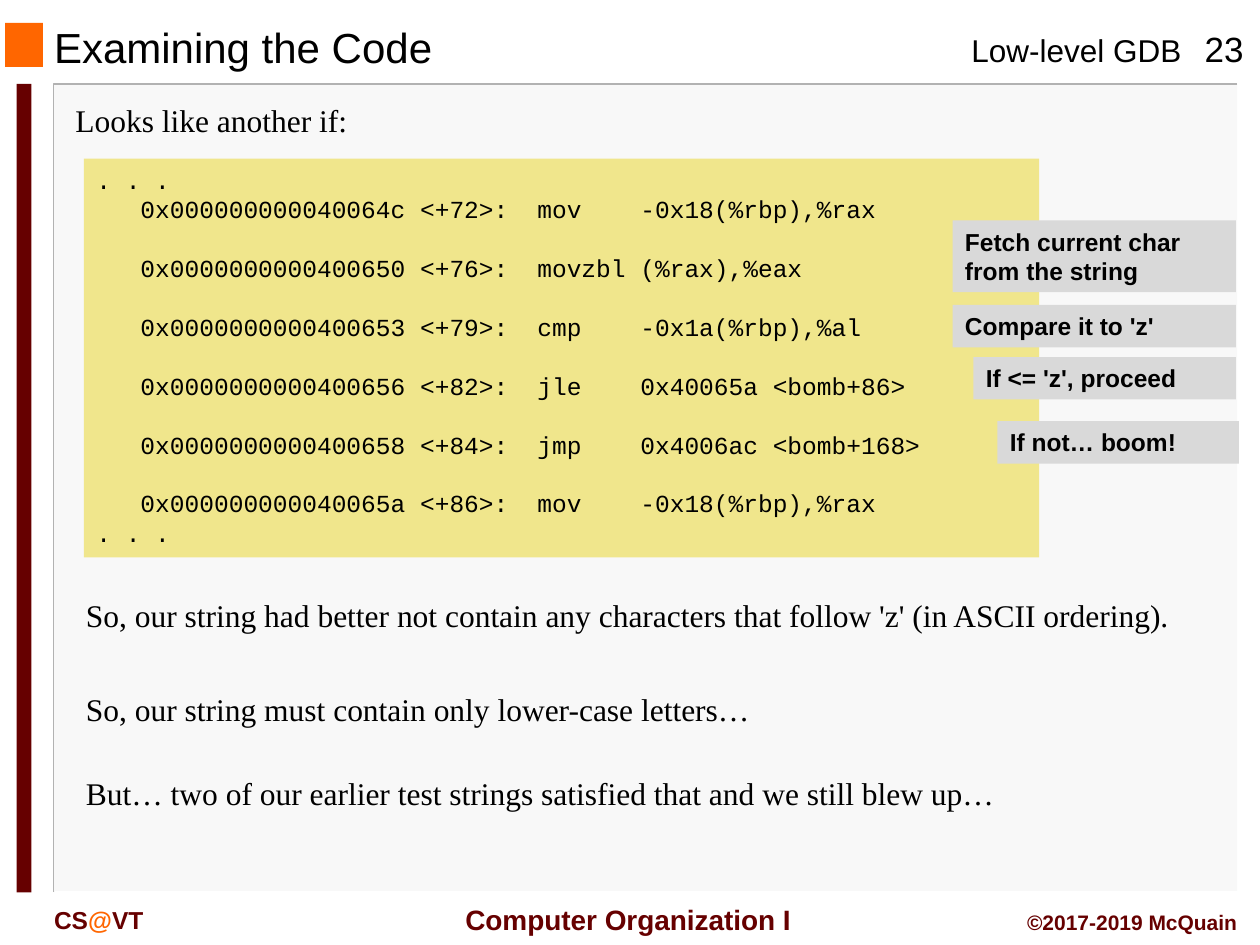
from pptx import Presentation
from pptx.dml.color import RGBColor
from pptx.enum.shapes import MSO_SHAPE
from pptx.enum.text import MSO_ANCHOR, PP_ALIGN
from pptx.util import Pt

COLORS = {
    "text": "000000", "maroon": "660000", "orange": "FF6600",
    "panel": "F8F8F8", "edge": "B2B2B2", "white": "FFFFFF",
    "code": "F0E68C", "note": "D9D9D9",
}
SANS, SERIF, MONO = "Arial", "Times New Roman", "Courier New"
CODE_SIZE = 14
CODE_LINE = 16.8


def rgb(name):
    return RGBColor.from_string(COLORS[name])


class SlideBuilder:
    """Draws on one slide; every box is (left, top, width, height) in points."""

    def __init__(self, slide):
        self.slide = slide

    def block(self, box, fill):
        shape = self.slide.shapes.add_shape(MSO_SHAPE.RECTANGLE, *map(Pt, box))
        shape.shadow.inherit = False
        shape.fill.solid()
        shape.fill.fore_color.rgb = rgb(fill)
        shape.line.fill.background()
        return shape

    def edge(self, points, color):
        start, *others = [(Pt(x), Pt(y)) for x, y in points]
        outline = self.slide.shapes.build_freeform(*start)
        outline.add_line_segments(others, close=False)
        shape = outline.convert_to_shape()
        shape.shadow.inherit = False
        shape.fill.background()
        shape.line.color.rgb = rgb(color)
        shape.line.width = Pt(1)

    def set_text(self, shape, text, size, font, color="text", bold=False,
                 align=PP_ALIGN.LEFT, anchor=MSO_ANCHOR.TOP, wrap=True):
        frame = shape.text_frame
        frame.word_wrap = wrap
        frame.vertical_anchor = anchor
        frame.text = text
        for paragraph in frame.paragraphs:
            paragraph.alignment = align
            for run in paragraph.runs:
                self.style(run, size, font, color, bold)
        return frame

    def style(self, run, size, font, color, bold):
        run.font.size = Pt(size)
        run.font.name = font
        run.font.bold = bold
        run.font.color.rgb = rgb(color)

    def label(self, box, text, size, font=SANS, **options):
        shape = self.slide.shapes.add_textbox(*map(Pt, box))
        return self.set_text(shape, text, size, font, **options)

    def note(self, box, text):
        self.set_text(self.block(box, "note"), text, 14, SANS, bold=True)

    def listing(self, box, instructions):
        """Sets the instructions between ellipses, a blank line's gap apart."""
        rows = [f"   0x{address:016x} <+{offset}>:\t{name:<7}{operands}"
                for address, offset, name, operands in instructions]
        text = "\n".join([". . .", *rows, ". . ."])
        frame = self.set_text(self.block(box, "code"), text, CODE_SIZE, MONO)
        for paragraph in frame.paragraphs[1:-2]:
            paragraph.space_after = Pt(CODE_LINE)


def draw_frame(builder):
    left, top, right, bottom = 30.5, 48, 707, 509.8
    builder.block((left, top, right - left, bottom - top), "panel")
    builder.edge([(right, top), (left, top), (left, bottom)], "edge")
    builder.edge([(right + 1, top), (right + 1, bottom), (left + 1, bottom)], "white")
    builder.block((3, 13, 21.6, 25.2), "orange")
    builder.block((9.5, 48, 8.5, 462), "maroon")

    builder.label((548, 14.4, 136, 28.8), "Low-level GDB", 18, wrap=False)
    builder.label((675.4, 12.2, 48.2, 31), "23", 20, align=PP_ALIGN.CENTER)
    builder.label((252.8, 512, 212.4, 26.6), "Computer Organization I", 16,
                  color="maroon", bold=True, align=PP_ALIGN.CENTER,
                  anchor=MSO_ANCHOR.MIDDLE, wrap=False)
    builder.label((504, 516.2, 210.2, 21.6), "©2017-2019 McQuain", 12,
                  color="maroon", bold=True, align=PP_ALIGN.RIGHT)
    course = builder.label((23.8, 513.4, 108, 23.8), "", 14).paragraphs[0]
    for part, color in [("CS", "maroon"), ("@", "orange"), ("VT", "maroon")]:
        run = course.add_run()
        run.text = part
        builder.style(run, 14, SANS, color, True)


def draw_content(builder):
    builder.label((23.8, 13, 455.8, 27.4), "Examining the Code", 24,
                  anchor=MSO_ANCHOR.MIDDLE)
    builder.label((36, 54, 666, 28.8), "Looks like another if:", 18, SERIF)
    builder.listing((48, 90.7, 545.8, 227.8), [
        (0x40064C, 72, "mov", "-0x18(%rbp),%rax"),
        (0x400650, 76, "movzbl", "(%rax),%eax"),
        (0x400653, 79, "cmp", "-0x1a(%rbp),%al"),
        (0x400656, 82, "jle", "0x40065a <bomb+86>"),
        (0x400658, 84, "jmp", "0x4006ac <bomb+168>"),
        (0x40065A, 86, "mov", "-0x18(%rbp),%rax"),
    ])
    for box, remark in [
        ((544.3, 126, 162, 41), "Fetch current char from the string"),
        ((544.3, 174.2, 162, 24.3), "Compare it to 'z'"),
        ((556.3, 204, 150, 24.3), "If <= 'z', proceed"),
        ((570, 240.7, 138, 24.3), "If not… boom!"),
    ]:
        builder.note(box, remark)
    for top, conclusion in [
        (337, "So, our string had better not contain any characters that"
              " follow 'z' (in ASCII ordering)."),
        (391, "So, our string must contain only lower-case letters…"),
        (439, "But… two of our earlier test strings satisfied that and we"
              " still blew up…"),
    ]:
        builder.label((42, top, 666, 28.8), conclusion, 18, SERIF)


def main():
    deck = Presentation()
    deck.slide_width, deck.slide_height = Pt(720), Pt(540)
    builder = SlideBuilder(deck.slides.add_slide(deck.slide_layouts[6]))
    draw_frame(builder)
    draw_content(builder)
    deck.save("out.pptx")


if __name__ == "__main__":
    main()
